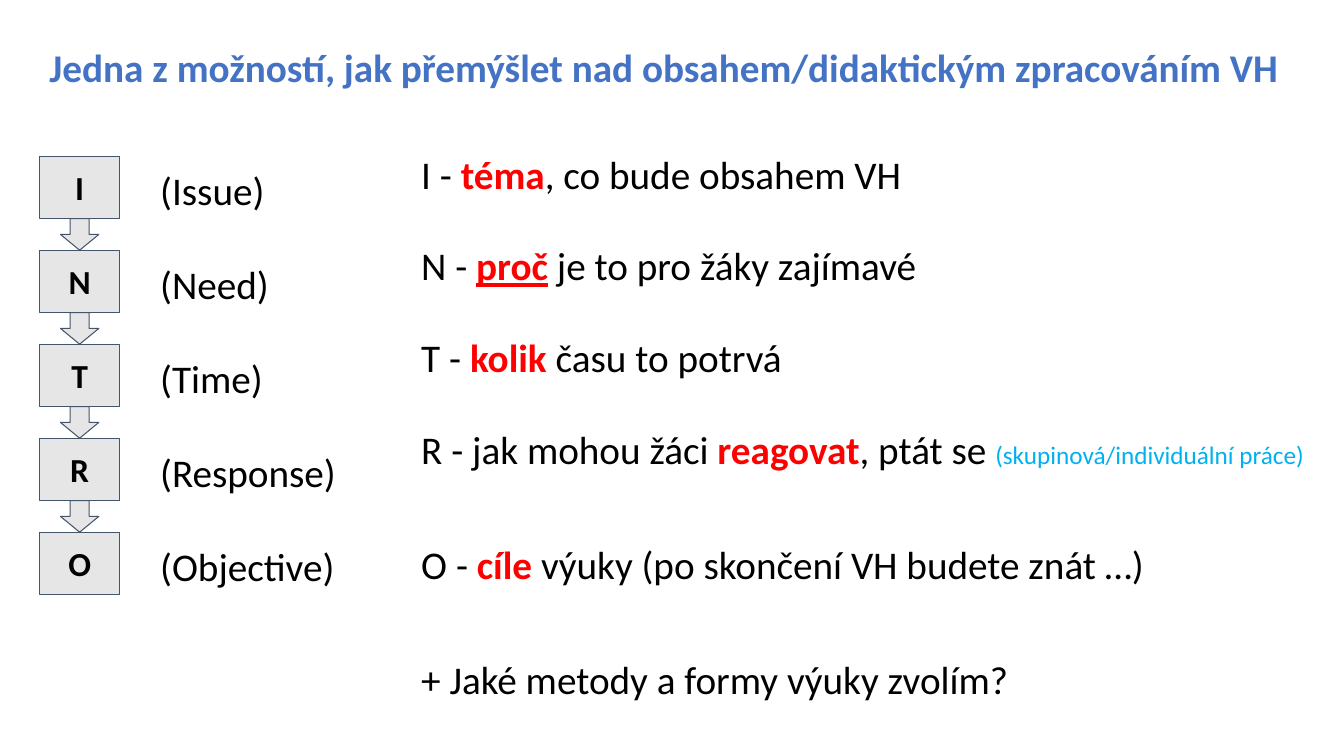
from pptx import Presentation
from pptx import util as u
from pptx.dml.color import RGBColor
from pptx.enum import shapes, text

COLORS = {
    "title": "4472C4",
    "text": "000000",
    "key": "FF0000",
    "note": "00B0F0",
    "box": "E7E6E6",
    "outline": "44546A",
}
FONT = "Calibri"

# Letter, English term, explanation as (text, format) runs, points before it
STEPS = [
    ("I", "(Issue)", [("I - ", {}), ("téma", {"color": "key", "bold": True}),
                      (", co bude obsahem VH", {})], 0),
    ("N", "(Need)", [("N - ", {}), ("proč", {"color": "key", "bold": True, "underline": True}),
                     (" je to pro žáky zajímavé", {})], 31.8),
    ("T", "(Time)", [("T - ", {}), ("kolik", {"color": "key", "bold": True}),
                     (" času to potrvá", {})], 31.8),
    ("R", "(Response)", [("R - jak mohou žáci ", {}), ("reagovat", {"color": "key", "bold": True}),
                         (", ptát se ", {}),
                         ("(skupinová/individuální práce)", {"color": "note", "size": 18})], 31.8),
    ("O", "(Objective)", [("O - ", {}), ("cíle", {"color": "key", "bold": True}),
                          (" výuky (po skončení VH budete znát …)", {})], 48.5),
]
QUESTION = ([("+ Jaké metody a formy výuky zvolím?", {})], 48.5)


def add_run(paragraph, content, size=28, color="text", bold=False, underline=False):
    run = paragraph.add_run()
    run.text = content
    font = run.font
    font.name, font.size = FONT, u.Pt(size)
    font.bold, font.underline = bold, underline
    font.color.rgb = RGBColor.from_string(COLORS[color])


class SlideBuilder:
    def __init__(self, slide):
        self.slide = slide
        self.chain = slide.shapes.add_group_shape()

    def frame(self, shape, margin_y, anchor=text.MSO_ANCHOR.TOP, wrap=True):
        frame = shape.text_frame
        frame.word_wrap, frame.vertical_anchor = wrap, anchor
        frame.margin_left = frame.margin_right = u.Inches(0.1)
        frame.margin_top = frame.margin_bottom = u.Inches(margin_y)
        return frame

    def title(self, content, *box):
        title = self.slide.shapes.title
        title.left, title.top, title.width, title.height = map(u.Inches, box)
        frame = self.frame(title, 0.05, wrap=False)
        frame.auto_size = text.MSO_AUTO_SIZE.NONE
        paragraph = frame.paragraphs[0]
        paragraph.alignment = text.PP_ALIGN.LEFT
        add_run(paragraph, content, color="title", bold=True)

    def chain_shape(self, kind, *box):
        shape = self.chain.shapes.add_shape(kind, *map(u.Inches, box))
        shape.shadow.inherit = False
        shape.fill.solid()
        shape.fill.fore_color.rgb = RGBColor.from_string(COLORS["box"])
        shape.line.color.rgb = RGBColor.from_string(COLORS["outline"])
        shape.line.width = u.Pt(0.75)
        return shape

    def letter_box(self, letter, *box):
        shape = self.chain_shape(shapes.MSO_SHAPE.RECTANGLE, *box)
        paragraph = self.frame(shape, 0.1, text.MSO_ANCHOR.MIDDLE).paragraphs[0]
        paragraph.alignment = text.PP_ALIGN.CENTER
        add_run(paragraph, letter, size=24, bold=True)

    def down_arrow(self, *box):
        self.chain_shape(shapes.MSO_SHAPE.DOWN_ARROW, *box)

    def text_list(self, entries, margin_y, *box):
        """Each entry holds its runs and the points of space before it."""
        textbox = self.slide.shapes.add_textbox(*map(u.Inches, box))
        frame = self.frame(textbox, margin_y)
        for i, (runs, gap) in enumerate(entries):
            paragraph = frame.add_paragraph() if i else frame.paragraphs[0]
            paragraph.space_before = u.Pt(gap)
            for content, style in runs:
                add_run(paragraph, content, **style)


def main():
    prs = Presentation()
    prs.slide_width, prs.slide_height = u.Inches(13.33), u.Inches(7.5)
    builder = SlideBuilder(prs.slides.add_slide(prs.slide_layouts[5]))

    # Title
    builder.title("Jedna z možností, jak přemýšlet nad obsahem/didaktickým zpracováním VH",
                  0.39, 0.38, 12.53, 0.57)

    # Chain of letters
    first_top, last_top, box_height = 1.55, 5.28, 0.62
    pitch = (last_top - first_top) / (len(STEPS) - 1)
    for i, (letter, *_) in enumerate(STEPS):
        top = first_top + i * pitch
        builder.letter_box(letter, 0.39, top, 0.8, box_height)
        if i < len(STEPS) - 1:
            builder.down_arrow(0.6, top + box_height, 0.38, pitch - box_height)

    # Explanations
    explanations = [(runs, gap) for _, _, runs, gap in STEPS] + [QUESTION]
    builder.text_list(explanations, 0.05, 4.08, 1.44, 9.43, 4.42)

    # English terms
    terms = [([(term, {})], 33.6 if i else 0) for i, (_, term, *_) in enumerate(STEPS)]
    builder.text_list(terms, 0.1, 1.49, 1.55, 1.98, 4.2)

    prs.save("out.pptx")


if __name__ == "__main__":
    main()
